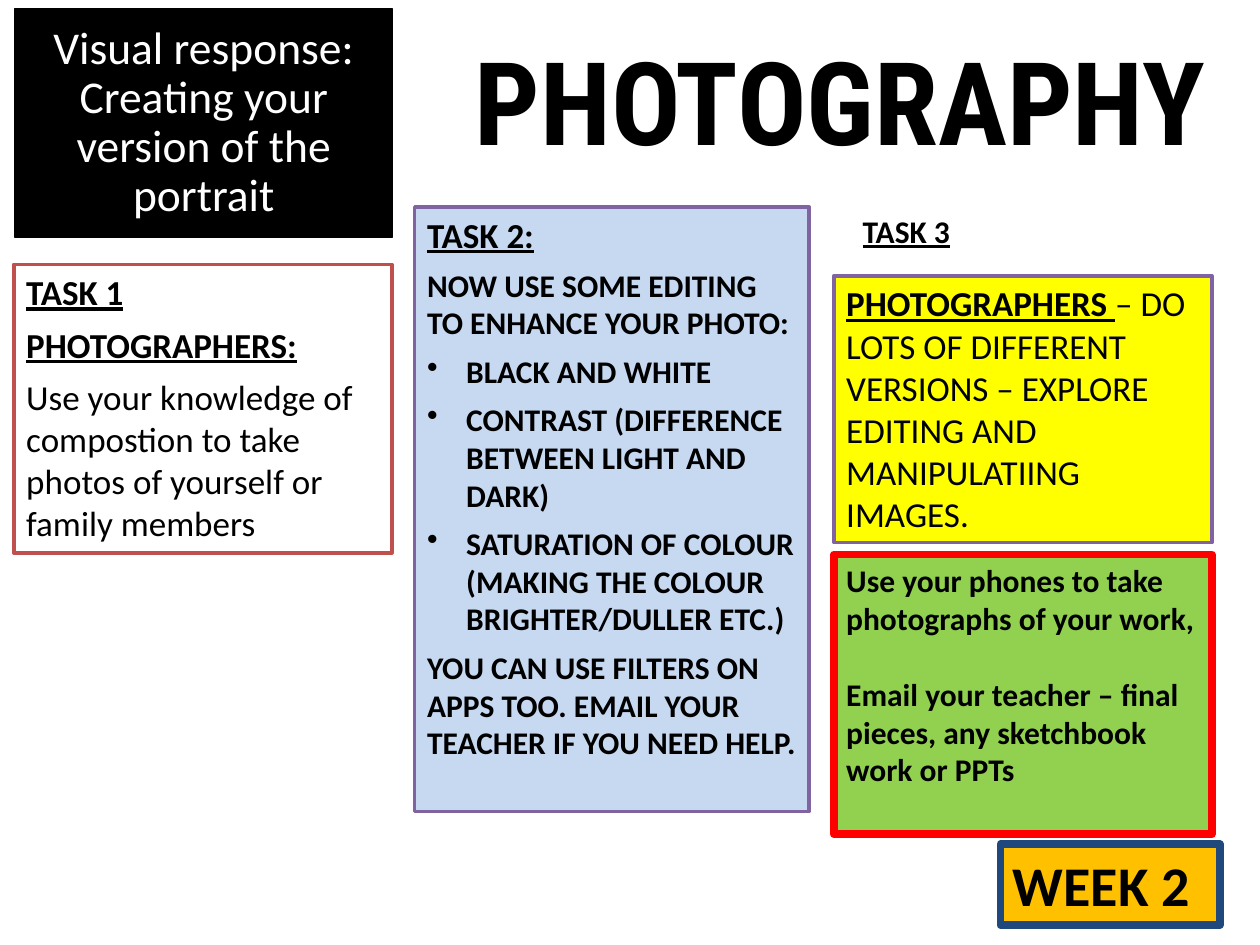
from pptx import Presentation
from pptx.dml.color import RGBColor
from pptx.enum.shapes import MSO_SHAPE
from pptx.enum.text import MSO_ANCHOR, PP_ALIGN
from pptx.util import Cm, Pt
from lxml.etree import SubElement
from pptx.oxml.ns import qn

BLACK = RGBColor(0x00, 0x00, 0x00)
WHITE = RGBColor(0xFF, 0xFF, 0xFF)
BRICK = RGBColor(0xC0, 0x50, 0x4D)
PURPLE = RGBColor(0x80, 0x64, 0xA2)
PALE_BLUE = RGBColor(0xC6, 0xD9, 0xF1)
YELLOW = RGBColor(0xFF, 0xFF, 0x00)
GREEN = RGBColor(0x92, 0xD0, 0x50)
RED = RGBColor(0xFF, 0x00, 0x00)
ORANGE = RGBColor(0xFF, 0xC0, 0x00)
NAVY = RGBColor(0x1F, 0x49, 0x7D)

deck = Presentation()
deck.slide_width = Cm(25.4)
deck.slide_height = Cm(19.05)
page = deck.slides.add_slide(deck.slide_layouts[6])


def add_box(left, top, width, height, fill=None, line=None, weight=2):
    area = Cm(left), Cm(top), Cm(width), Cm(height)
    if fill is None:
        box = page.shapes.add_textbox(*area)
    else:
        box = page.shapes.add_shape(MSO_SHAPE.RECTANGLE, *area)
        box.shadow.inherit = False
        box.fill.solid()
        box.fill.fore_color.rgb = fill
        box.line.color.rgb = line
        box.line.width = Pt(weight)
    box.text_frame.word_wrap = True
    box.text_frame.vertical_anchor = MSO_ANCHOR.TOP
    return box


def add_para(box, text, size, bold=True, underline=False, after=0, color=BLACK, name="Calibri"):
    frame = box.text_frame
    para = frame.add_paragraph() if frame.text else frame.paragraphs[0]
    para.text = text
    para.alignment = PP_ALIGN.LEFT
    para.space_after = Pt(after)
    para.font.name = name
    para.font.size = Pt(size)
    para.font.bold = bold
    para.font.underline = underline
    para.font.color.rgb = color
    return para


title = add_box(0.3, 0.18, 7.62, 4.6, BLACK, BLACK, 0.75)
title.text_frame.vertical_anchor = MSO_ANCHOR.MIDDLE
para = add_para(title, "Visual response:\vCreating your version of the portrait", 26, bold=False, color=WHITE)
para.alignment = PP_ALIGN.CENTER
para.line_spacing = 0.9

task_one = add_box(0.28, 5.33, 7.62, 5.82, WHITE, BRICK)
for heading in ("TASK 1", "PHOTOGRAPHERS:"):
    add_para(task_one, heading, 20, underline=True, after=6)
add_para(
    task_one,
    "Use your knowledge of compostion to take photos of yourself or family members",
    20,
    bold=False,
    after=6,
)

task_two = add_box(8.36, 4.17, 7.95, 12.19, PALE_BLUE, PURPLE)
add_para(task_two, "TASK 2:", 20, underline=True, after=6)
add_para(task_two, "NOW USE SOME EDITING TO ENHANCE YOUR PHOTO:", 18, after=6)
for edit in (
    "BLACK AND WHITE",
    "CONTRAST (DIFFERENCE BETWEEN LIGHT AND DARK)",
    "SATURATION OF COLOUR (MAKING THE COLOUR BRIGHTER/DULLER ETC.)",
):
    para = add_para(task_two, edit, 18, after=6)
    properties = para._p.get_or_add_pPr()
    properties.set("marL", str(Cm(0.79)))
    properties.set("indent", str(-Cm(0.79)))
    bullet = SubElement(properties, qn("a:buChar"), char="•")
    properties.find(qn("a:defRPr")).addprevious(bullet)
add_para(
    task_two,
    "YOU CAN USE FILTERS ON APPS TOO. EMAIL YOUR TEACHER IF YOU NEED HELP.",
    18,
    after=6,
)

task_three = add_box(16.81, 5.56, 7.62, 5.38, YELLOW, PURPLE)
para = add_para(task_three, "", 20, bold=False, after=6)
span = para.add_run()
span.text = "PHOTOGRAPHERS "
span.font.bold = True
span.font.underline = True
span = para.add_run()
span.text = "– DO LOTS OF DIFFERENT VERSIONS – EXPLORE EDITING AND MANIPULATIING IMAGES."

task_three_heading = add_box(17.14, 4.14, 7.62, 1.02)
add_para(task_three_heading, "TASK 3", 18, underline=True)

week = add_box(20.17, 17.02, 4.42, 1.63, ORANGE, NAVY, 4.5)
add_para(week, "WEEK 2", 32)

subject = add_box(9.32, 0.48, 16.08, 3.07)
add_para(subject, "PHOTOGRAPHY", 66, name="Roboto Condensed")

hand_in = add_box(16.81, 11.18, 7.62, 5.64, GREEN, RED, 4.5)
add_para(hand_in, "Use your phones to take photographs of your work,", 18)
para = add_para(hand_in, "Email your teacher – final pieces, any sketchbook work or PPTs", 18)
para.space_before = Pt(22)

deck.save("out.pptx")
